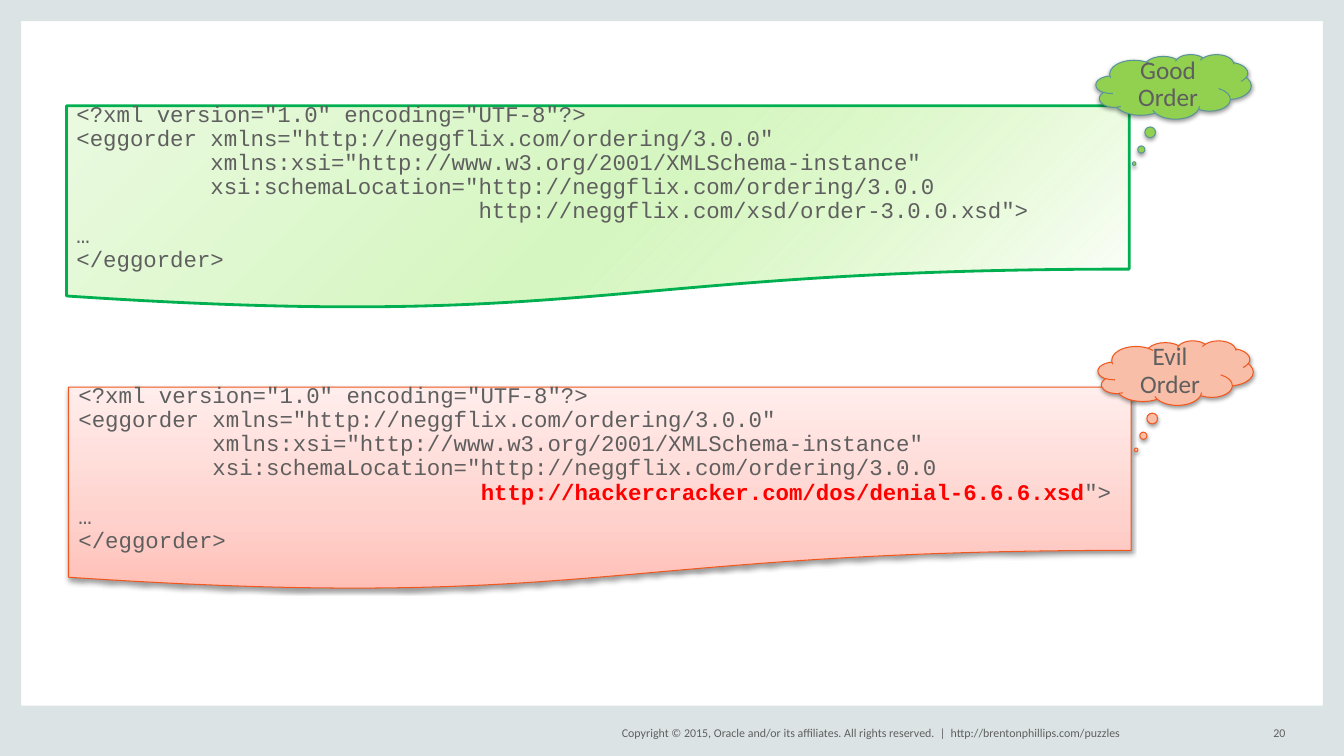
from lxml import etree
from pptx import Presentation
from pptx.dml.color import RGBColor
from pptx.enum.shapes import MSO_SHAPE as Shape
from pptx.enum.text import MSO_ANCHOR as Anchor, PP_ALIGN as Align
from pptx.oxml import parse_xml
from pptx.oxml.ns import nsdecls, qn
from pptx.util import Inches, Pt

FRAME = RGBColor(0xDC, 0xE3, 0xE4)
GRAY = RGBColor(0x5F, 0x5F, 0x5F)
RED = RGBColor(0xFF, 0x00, 0x00)
GREEN_LINE = RGBColor(0x00, 0xB0, 0x50)
ORANGE_LINE = RGBColor(0xF0, 0x58, 0x1F)
TEAL_LINE = RGBColor(0x59, 0x95, 0x98)
GOOD_FILL = RGBColor(0x92, 0xD0, 0x50)
EVIL_FILL = RGBColor(0xF9, 0xBE, 0xA8)

# Gradient stops: position in percent, colour, opacity in percent
GOOD_STOPS = [(0, RGBColor(0xBE, 0xF2, 0x97), 0),
              (50, RGBColor(0xD5, 0xF6, 0xC0), 100),
              (100, RGBColor(0xEA, 0xFA, 0xE0), 100)]
EVIL_STOPS = [(0, RGBColor(0xFF, 0xBF, 0xB6), 100),
              (35, RGBColor(0xFF, 0xD1, 0xCC), 100),
              (100, RGBColor(0xFF, 0xEE, 0xEC), 100)]

CODE_FONT = {"name": "Courier New", "size": Pt(16)}
CLOUD_FONT = {"name": "Calibri", "size": Pt(18)}
FOOTER_FONT = {"name": "Calibri", "size": Pt(8.5)}

SCHEMA_INDENT = " " * 30
ORDER_START = [
    '<?xml version="1.0" encoding="UTF-8"?>',
    '<eggorder xmlns="http://neggflix.com/ordering/3.0.0"',
    '          xmlns:xsi="http://www.w3.org/2001/XMLSchema-instance"',
    '          xsi:schemaLocation="http://neggflix.com/ordering/3.0.0',
]
ORDER_END = ["…", "</eggorder>"]


def add_run(paragraph, text, font, color=GRAY, bold=False):
    run = paragraph.add_run()
    run.text = text
    for name, value in {**font, "bold": bold}.items():
        setattr(run.font, name, value)
    run.font.color.rgb = color


def add_box(slide, kind, box, line_color, line_width):
    shape = slide.shapes.add_shape(kind, *map(Inches, box))
    shape.shadow.inherit = False
    shape.line.color.rgb = line_color
    shape.line.width = Pt(line_width)
    shape.text_frame.word_wrap = True
    shape.text_frame.vertical_anchor = Anchor.MIDDLE
    return shape


def add_shadow(shape):
    effects = shape._element.spPr.find(qn("a:effectLst"))
    shadow = etree.SubElement(effects, qn("a:outerShdw"), blurRad=str(Pt(3.1)),
                              dist=str(Pt(1.6)), dir="5400000", rotWithShape="0")
    color = etree.SubElement(shadow, qn("a:srgbClr"), val="000000")
    etree.SubElement(color, qn("a:alpha"), val="38000")


def set_gradient(shape, stops, angle):
    stop_xml = "".join(
        f'<a:gs pos="{position * 1000}"><a:srgbClr val="{color}">'
        f'<a:alpha val="{opacity * 1000}"/></a:srgbClr></a:gs>'
        for position, color, opacity in stops)
    gradient = parse_xml(
        f'<a:gradFill {nsdecls("a")} rotWithShape="1"><a:gsLst>{stop_xml}</a:gsLst>'
        f'<a:lin ang="{angle * 60000}" scaled="0"/></a:gradFill>')
    shape._element.spPr.find(qn("a:prstGeom")).addnext(gradient)


def add_document(slide, box, schema_runs, stops, angle, line_color, line_width):
    """XML order on a sheet; schema_runs make up its schema address line."""
    shape = add_box(slide, Shape.FLOWCHART_DOCUMENT, box, line_color, line_width)
    set_gradient(shape, stops, angle)
    lines = [[(text,)] for text in ORDER_START]
    lines += [schema_runs] + [[(text,)] for text in ORDER_END]
    frame = shape.text_frame
    for index, runs in enumerate(lines):
        paragraph = frame.add_paragraph() if index else frame.paragraphs[0]
        paragraph.alignment = Align.LEFT
        paragraph.line_spacing = 0.9
        for text, *style in runs:
            add_run(paragraph, text, CODE_FONT, *style)
    return shape


def add_cloud(slide, box, text, fill, line_color):
    cloud = add_box(slide, Shape.CLOUD_CALLOUT, box, line_color, 0.75)
    cloud.adjustments[0], cloud.adjustments[1] = -0.254, 1.192
    cloud.fill.solid()
    cloud.fill.fore_color.rgb = fill
    add_shadow(cloud)
    paragraph = cloud.text_frame.paragraphs[0]
    paragraph.alignment = Align.CENTER
    paragraph.line_spacing = 0.9
    add_run(paragraph, text, CLOUD_FONT)


def add_frame(slide, width, height):
    side, bottom = 0.21, 0.5
    for box in [(0, 0, side, height), (width - side, 0, side, height),
                (0, height - bottom, width, bottom), (0, 0, width, side)]:
        band = slide.shapes.add_shape(Shape.RECTANGLE, *map(Inches, box))
        band.shadow.inherit = False
        band.fill.solid()
        band.fill.fore_color.rgb = FRAME
        band.line.fill.background()


def add_footer(slide, top, height):
    for left, width, alignment, text in [
        (5.88, 3.5, Align.RIGHT,
         "Copyright © 2015, Oracle and/or its affiliates. All rights reserved.  |"),
        (9.43, 3, Align.LEFT, "http://brentonphillips.com/puzzles"),
        (12.33, 0.42, Align.RIGHT, "20"),
    ]:
        label = slide.shapes.add_textbox(*map(Inches, (left, top, width, height)))
        frame = label.text_frame
        for side in ("left", "top", "right", "bottom"):
            setattr(frame, f"margin_{side}", 0)
        frame.word_wrap = False
        frame.vertical_anchor = Anchor.MIDDLE
        frame.paragraphs[0].alignment = alignment
        add_run(frame.paragraphs[0], text, FOOTER_FONT)


def build_orders_slide(presentation, width, height):
    slide = presentation.slides.add_slide(presentation.slide_layouts[6])
    add_frame(slide, width, height)
    add_footer(slide, height - 0.33, 0.2)

    # Two XML orders
    add_document(slide, (0.66, 1.05, 10.54, 2.02),
                 [(SCHEMA_INDENT + 'http://neggflix.com/xsd/order-3.0.0.xsd">',)],
                 GOOD_STOPS, 225, GREEN_LINE, 2)
    evil_order = add_document(
        slide, (0.68, 3.84, 10.54, 2.02),
        [(SCHEMA_INDENT,),
         ("http://hackercracker.com/dos/denial-6.6.6.xsd", RED, True),
         ('">',)],
        EVIL_STOPS, 270, ORANGE_LINE, 0.75)
    add_shadow(evil_order)

    # Cloud labels
    add_cloud(slide, (10.89, 3.38, 1.54, 0.64), "Evil Order", EVIL_FILL, ORANGE_LINE)
    add_cloud(slide, (10.87, 0.54, 1.54, 0.64), "Good Order", GOOD_FILL, TEAL_LINE)


def main():
    width, height = 13.33, 7.5
    presentation = Presentation()
    presentation.slide_width = Inches(width)
    presentation.slide_height = Inches(height)
    build_orders_slide(presentation, width, height)
    presentation.save("out.pptx")


if __name__ == "__main__":
    main()
